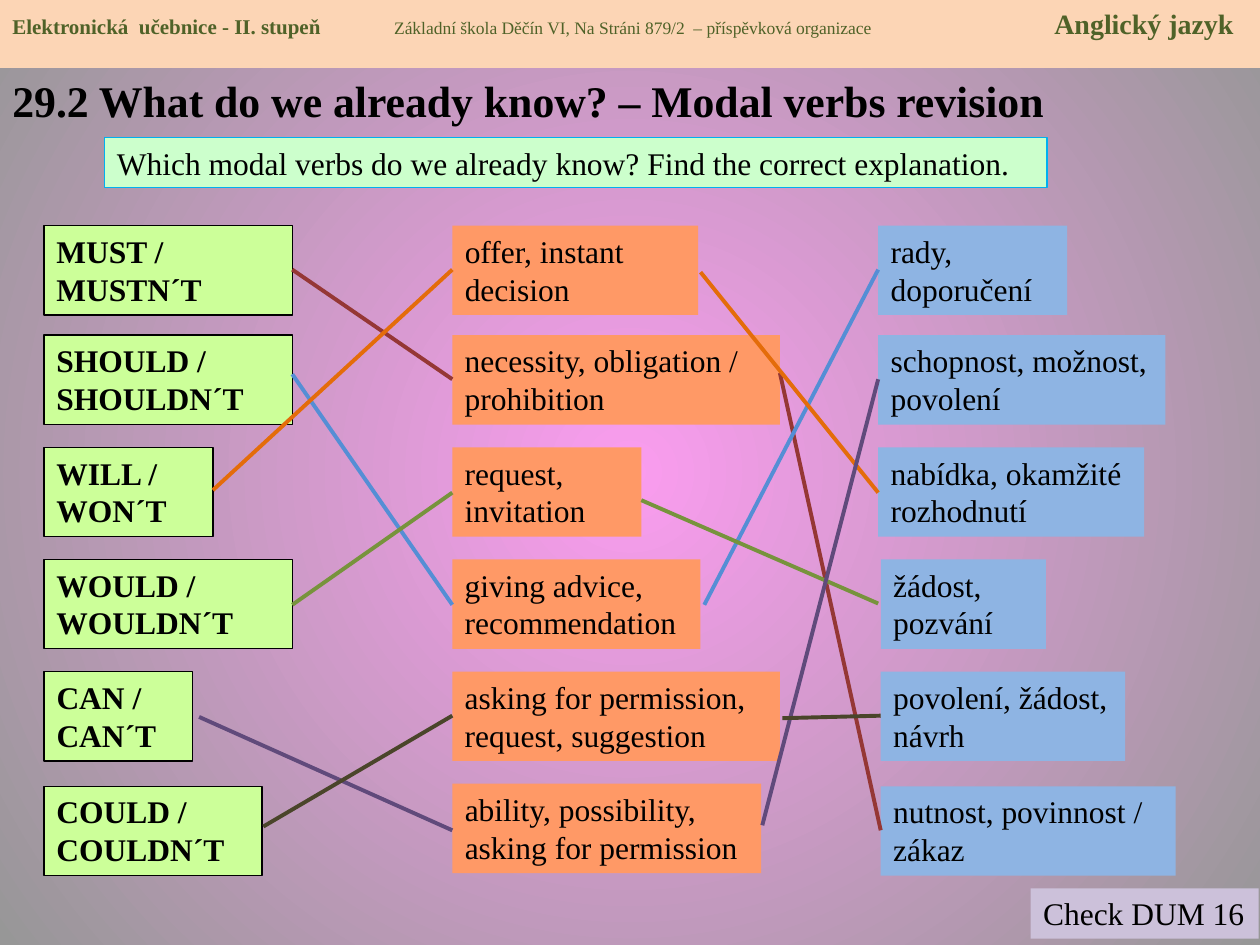
import lxml.etree
import pptx
import pptx.dml.color
import pptx.enum.shapes
import pptx.enum.text
import pptx.oxml
import pptx.oxml.ns
import pptx.util

Inches = pptx.util.Inches
Pt = pptx.util.Pt

COLORS = {
    "text": "000000", "header": "FCD5B5", "header_text": "4F6228",
    "question": "CCFFCC", "question_edge": "00B0F0", "check": "CCC1DA",
    "verb": "CCFF99", "meaning": "FF9966", "czech": "8EB4E3",
    "glow": "FA9CEF", "rim": "979797",
    "must": "953735", "should": "558ED5", "will": "E46C0A",
    "would": "77933C", "can": "604A7B", "could": "4A452A",
}

ROW_TOPS = [1.79, 2.66, 3.55, 4.44, 5.33, 6.24]
ROW_HEIGHT = 0.71

VERBS = [
    ("MUST /\nMUSTN´T", 1.97), ("SHOULD /\nSHOULDN´T", 1.97),
    ("WILL /\nWON´T", 1.34), ("WOULD /\nWOULDN´T", 1.97),
    ("CAN /\nCAN´T", 1.18), ("COULD /\nCOULDN´T", 1.73),
]
MEANINGS = [
    ("offer, instant\ndecision", 1.95), ("necessity, obligation / prohibition", 2.6),
    ("request, invitation", 1.5), ("giving advice, recommendation", 1.97),
    ("asking for permission, request, suggestion", 2.6),
    ("ability, possibility, asking for permission", 2.45),
]
CZECH = [
    ("rady, doporučení", 1.5), ("schopnost, možnost, povolení", 2.28),
    ("nabídka, okamžité rozhodnutí", 2.11), ("žádost, pozvání", 1.31),
    ("povolení, žádost, návrh", 1.94), ("nutnost, povinnost / zákaz", 2.34),
]
MATCHES = {
    "must": [(2.32, 2.14, 3.59, 3.01), (6.19, 2.96, 6.99, 6.59)],
    "should": [(2.32, 2.97, 3.59, 4.8), (5.59, 4.8, 6.97, 2.14)],
    "will": [(1.69, 3.89, 3.59, 2.14), (5.56, 2.16, 6.97, 3.91)],
    "would": [(2.32, 4.8, 3.59, 3.91), (5.09, 3.97, 6.97, 4.79)],
    "can": [(1.58, 5.69, 3.59, 6.59), (6.05, 6.55, 6.97, 3.01)],
    "could": [(2.09, 6.56, 3.59, 5.68), (6.21, 5.7, 6.99, 5.68)],
}


def rgb(name):
    """Return the palette colour of that name."""
    return pptx.dml.color.RGBColor.from_string(COLORS[name])


def add_text(paragraph, text, size=18, bold=False, color="text", font="Times New Roman"):
    """Append formatted text to a paragraph."""
    run = paragraph.add_run()
    run.text = text
    run.font.name = font
    run.font.size = Pt(size)
    run.font.bold = bold
    run.font.color.rgb = rgb(color)


class SlideBuilder:
    """Holds the slide and draws its elements in one style."""

    def __init__(self, slide, line_width=2.25, edge_width=0.75):
        """Keep the slide and the line widths."""
        self.slide = slide
        self.line_width = Pt(line_width)
        self.edge_width = Pt(edge_width)

    def background(self, center, rim):
        """Fill the background with a circular gradient."""
        fill = self.slide.background.fill
        fill.gradient()
        for stop, color, position in zip(fill.gradient_stops, (center, rim), (0, 1)):
            stop.color.rgb = rgb(color)
            stop.position = position
        linear = next(self.slide.element.iter(pptx.oxml.ns.qn("a:lin")))
        circle = pptx.oxml.parse_xml(
            f'<a:path {pptx.oxml.ns.nsdecls("a")} path="circle">'
            '<a:fillToRect l="50000" t="50000" r="50000" b="50000"/></a:path>')
        linear.getparent().replace(linear, circle)

    def title(self, text, left, top, width, height, **style):
        """Add the slide heading."""
        frame = self.slide.shapes.add_textbox(*map(Inches, (left, top, width, height))).text_frame
        frame.word_wrap = True
        add_text(frame.paragraphs[0], text, **style)

    def box(self, text, left, top, width, height, fill, edge=None, wrap=True, **style):
        """Add a filled box with one paragraph per line of text."""
        box = self.slide.shapes.add_shape(
            pptx.enum.shapes.MSO_SHAPE.RECTANGLE, *map(Inches, (left, top, width, height)))
        box.shadow.inherit = False
        box.fill.solid()
        box.fill.fore_color.rgb = rgb(fill)
        if edge:
            box.line.color.rgb = rgb(edge)
            box.line.width = self.edge_width
        else:
            box.line.fill.background()
        frame = box.text_frame
        frame.word_wrap = wrap
        frame.vertical_anchor = pptx.enum.text.MSO_ANCHOR.TOP
        for index, line in enumerate(text.split("\n")):
            paragraph = frame.add_paragraph() if index else frame.paragraphs[0]
            paragraph.alignment = pptx.enum.text.PP_ALIGN.LEFT
            if line:
                add_text(paragraph, line, **style)
        return box

    def header(self, parts, tabs, height, fill):
        """Add the top bar with its parts set at tab stops."""
        bar = self.box("", 0, 0, 10, height, fill)
        paragraph = bar.text_frame.paragraphs[0]
        qn = pptx.oxml.ns.qn
        stops = lxml.etree.SubElement(paragraph._p.get_or_add_pPr(), qn("a:tabLst"))
        for tab in tabs:
            lxml.etree.SubElement(stops, qn("a:tab"), pos=str(Inches(tab)), algn="l")
        for text, size, bold in parts:
            add_text(paragraph, text, size=size, bold=bold, color="header_text")

    def column(self, entries, lefts, tops, fill, **style):
        """Add a column of boxes, one for each row."""
        for (text, width), left, top in zip(entries, lefts, tops):
            self.box(text, left, top, width, ROW_HEIGHT, fill, **style)

    def match(self, ends, color):
        """Add a line that joins two boxes."""
        line = self.slide.shapes.add_connector(
            pptx.enum.shapes.MSO_CONNECTOR.STRAIGHT, *map(Inches, ends))
        line.line.color.rgb = rgb(color)
        line.line.width = self.line_width
        lxml.etree.SubElement(line._element.spPr, pptx.oxml.ns.qn("a:effectLst"))


def main():
    """Build the modal verbs slide."""
    deck = pptx.Presentation()
    deck.slide_width, deck.slide_height = Inches(10), Inches(7.5)
    builder = SlideBuilder(deck.slides.add_slide(deck.slide_layouts[6]))
    builder.background("glow", "rim")
    builder.title("29.2 What do we already know? – Modal verbs revision",
                  0, 0.54, 9.25, 6.96, size=25, bold=True)
    builder.header([
        ("Elektronická  učebnice - II. stupeň\t", 12, True),
        ("Základní škola Děčín VI, Na Stráni 879/2  – příspěvková organizace\t", 10, False),
        ("Anglický jazyk", 16, True),
    ], tabs=(3.03, 8.27), height=0.54, fill="header")
    builder.box("Which modal verbs do we already know? Find the correct explanation.",
                0.83, 1.09, 7.48, 0.4, "question", edge="question_edge")
    builder.box("Check DUM 16", 8.18, 7.05, 1.81, 0.4, "check", wrap=False)
    builder.column(VERBS, [0.35] * 6, ROW_TOPS, "verb", edge="text", bold=True)
    builder.column(MEANINGS, [3.59] * 6, ROW_TOPS[:-1] + [6.22], "meaning")
    builder.column(CZECH, [6.97] * 3 + [6.99] * 3, ROW_TOPS, "czech")
    for verb, lines in MATCHES.items():
        for ends in lines:
            builder.match(ends, verb)
    deck.save("out.pptx")


if __name__ == "__main__":
    main()
